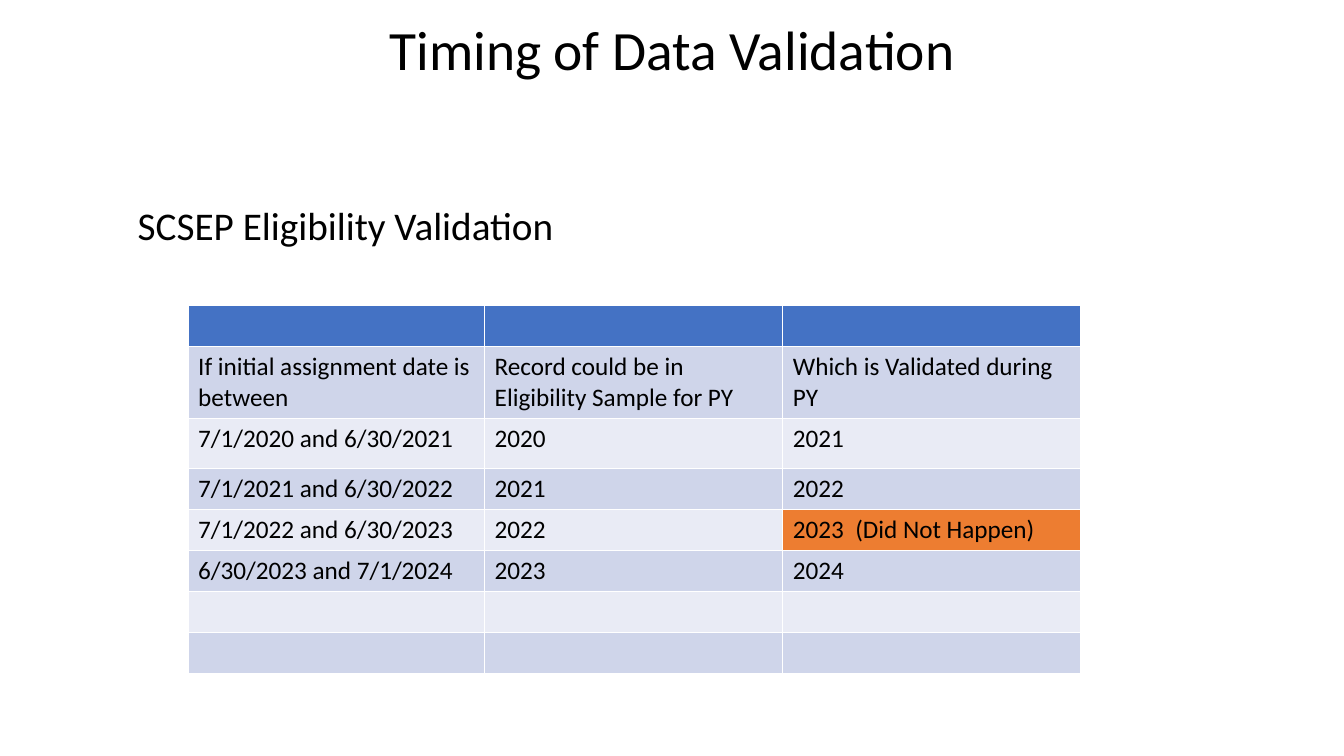
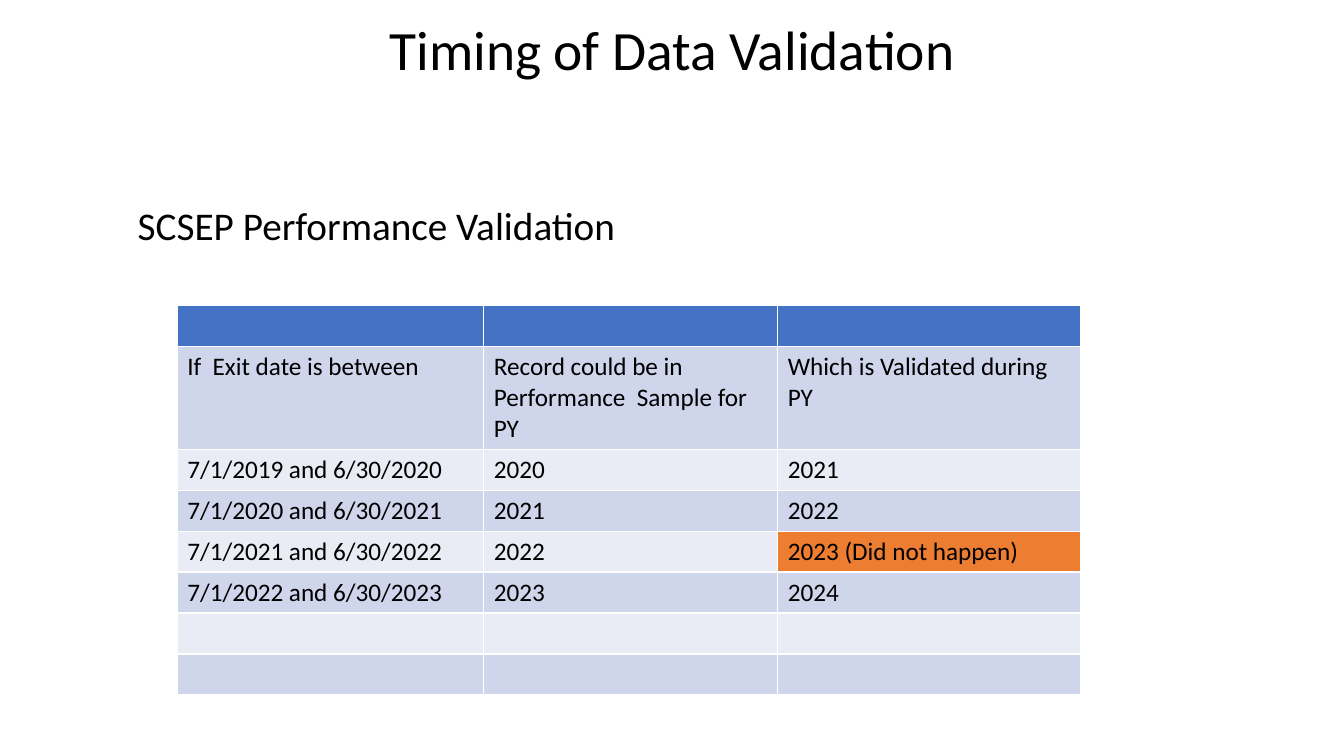
from lxml.etree import SubElement
from pptx import Presentation
from pptx.dml.color import RGBColor
from pptx.enum.text import MSO_ANCHOR as Anchor, MSO_AUTO_SIZE as AutoSize, PP_ALIGN as Align
from pptx.oxml.ns import qn
from pptx.util import Emu, Pt

COLUMNS, ROWS = 160, 90
UNIT = 76200  # one grid cell is a twelfth of an inch
FONT = "Calibri"
COLORS = {
    "text": "000000",
    "header": "4472C4",
    "dark band": "CFD5EA",
    "light band": "E9EBF5",
    "highlight": "ED7D31",
}


def grid(cells):
    return Emu(round(cells * UNIT))


def color(name):
    return RGBColor.from_string(COLORS[name])


class Deck:
    """Holds the shared style and the slide being built."""

    def __init__(self):
        self.prs = Presentation()
        self.prs.slide_width, self.prs.slide_height = grid(COLUMNS), grid(ROWS)
        self.slide = None

    def new_slide(self):
        self.slide = self.prs.slides.add_slide(self.prs.slide_layouts[1])

    def style(self, paragraph, size):
        for run in paragraph.runs:
            run.font.name = FONT
            run.font.size = Pt(size)
            run.font.color.rgb = color("text")

    def fill_placeholder(self, holder, text, top, height, size):
        holder.left, holder.width = grid(11), grid(138)
        holder.top, holder.height = grid(top), grid(height)
        frame = holder.text_frame
        frame.text = text
        frame.word_wrap = True
        frame.auto_size = AutoSize.NONE
        paragraph = frame.paragraphs[0]
        paragraph.line_spacing = 0.9
        self.style(paragraph, size)
        return frame, paragraph

    def title(self, text):
        frame, paragraph = self.fill_placeholder(
            self.slide.shapes.title, text, 4.8, 17.4, 39.6)
        frame.vertical_anchor = Anchor.MIDDLE
        # The bottom inset lifts the title towards the slide's top edge
        frame.margin_top, frame.margin_bottom = 0, grid(14.4)
        paragraph.alignment = Align.CENTER

    def subtitle(self, text):
        frame, paragraph = self.fill_placeholder(
            self.slide.placeholders[1], text, 24, 57.1, 28)
        frame.vertical_anchor = Anchor.TOP
        paragraph.alignment = Align.LEFT
        paragraph.space_before = Pt(10)
        properties = paragraph._p.get_or_add_pPr()
        properties.set("marL", str(grid(4.2)))
        properties.set("indent", "0")
        SubElement(properties, qn("a:buNone"))

    def table(self, left, widths, heights, records, highlight):
        """Draw a banded table under an empty header row; heights gives every row."""
        table = self.slide.shapes.add_table(
            len(heights), len(widths), grid(left), grid(36.4),
            grid(sum(widths)), grid(sum(heights))).table
        for column, width in zip(table.columns, widths):
            column.width = grid(width)
        for r, height in enumerate(heights):
            table.rows[r].height = grid(height)
            band = "header" if r == 0 else "dark band" if r % 2 else "light band"
            for c in range(len(widths)):
                cell = table.cell(r, c)
                cell.fill.solid()
                cell.fill.fore_color.rgb = color("highlight" if (r, c) == highlight else band)
                if 1 <= r <= len(records):
                    cell.text_frame.text = records[r - 1][c]
                    self.style(cell.text_frame.paragraphs[0], 18)


LINE = 4.88  # height of a one-line table row
SKIPPED_YEAR = (4, 2)

SECTIONS = [
    {
        "subtitle": "SCSEP Eligibility Validation",
        "left": 22.4,
        "widths": [35.3, 35.5, 35.5],
        "heights": [LINE, 8.5, 6] + [LINE] * 5,
        "records": [
            ("If initial assignment date is between",
             "Record could be in Eligibility Sample for PY", "Which is Validated during PY"),
            ("7/1/2020 and 6/30/2021", "2020", "2021"),
            ("7/1/2021 and 6/30/2022", "2021", "2022"),
            ("7/1/2022 and 6/30/2023", "2022", "2023  (Did Not Happen)"),
            ("6/30/2023 and 7/1/2024", "2023", "2024"),
        ],
    },
    {
        "subtitle": "SCSEP Performance Validation",
        "left": 21.1,
        "widths": [36.5, 35, 36.1],
        "heights": [LINE, 12.2] + [LINE] * 6,
        "records": [
            ("If  Exit date is between",
             "Record could be in Performance  Sample for PY", "Which is Validated during PY"),
            ("7/1/2019 and 6/30/2020", "2020", "2021"),
            ("7/1/2020 and 6/30/2021", "2021", "2022"),
            ("7/1/2021 and 6/30/2022", "2022", "2023 (Did not happen)"),
            ("7/1/2022 and 6/30/2023", "2023", "2024"),
        ],
    },
]


def main():
    deck = Deck()
    for section in SECTIONS:
        deck.new_slide()
        deck.title("Timing of Data Validation")
        deck.subtitle(section["subtitle"])
        deck.table(section["left"], section["widths"], section["heights"],
                   section["records"], SKIPPED_YEAR)
    deck.prs.save("out.pptx")


if __name__ == "__main__":
    main()
